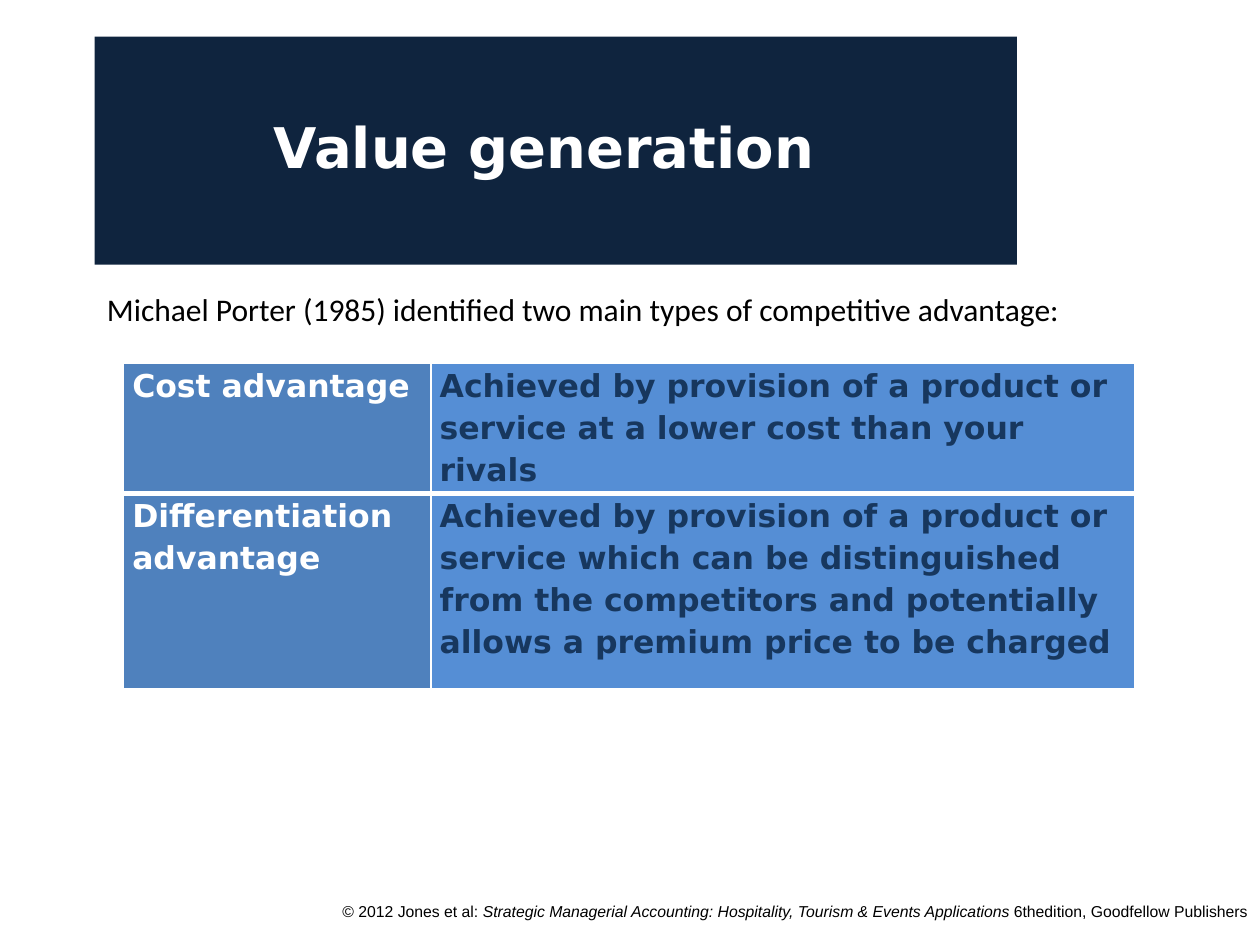
from dataclasses import dataclass

from lxml import etree
from pptx import Presentation
from pptx.dml.color import RGBColor
from pptx.enum.text import MSO_ANCHOR, PP_ALIGN
from pptx.oxml.ns import qn
from pptx.util import Inches, Pt

MIDDLE, TOP = MSO_ANCHOR.MIDDLE, MSO_ANCHOR.TOP
CENTER, LEFT, RIGHT = PP_ALIGN.CENTER, PP_ALIGN.LEFT, PP_ALIGN.RIGHT


@dataclass(frozen=True)
class Theme:
    white: str = "FFFFFF"
    black: str = "000000"
    navy: str = "0F243E"
    ink: str = "17375E"
    label: str = "4F81BD"
    detail: str = "558ED5"
    heading_font: str = "DejaVu Sans"
    body_font: str = "Calibri"
    footer_font: str = "Arial"
    title_size: int = 32
    body_size: int = 18
    footer_size: int = 9


class SlideBuilder:
    """Adds styled elements to the current slide."""

    def __init__(self, slide, theme):
        self.slide = slide
        self.theme = theme

    def set_attrs(self, obj, values):
        for name, value in values.items():
            setattr(obj, name, value)

    def run(self, p, text, font, size, color, **extra):
        r = p.add_run()
        r.text = text
        self.set_attrs(r.font, {"name": font, "size": Pt(size), **extra})
        r.font.color.rgb = RGBColor.from_string(color)

    def place(self, sp, left, top, width, height):
        self.set_attrs(sp, {"left": Inches(left), "top": Inches(top),
                            "width": Inches(width), "height": Inches(height)})

    def title(self, text, *box):
        t = self.theme
        sp = self.slide.shapes.title
        self.place(sp, *box)
        sp.fill.solid()
        sp.fill.fore_color.rgb = RGBColor.from_string(t.navy)
        tf = sp.text_frame
        self.set_attrs(tf, {"word_wrap": True, "vertical_anchor": MIDDLE,
                            "margin_right": Inches(0.28), "margin_bottom": Inches(0.12)})
        p = tf.paragraphs[0]
        p.alignment = CENTER
        self.run(p, text, t.heading_font, t.title_size, t.white, bold=True)

    def text(self, parts, box, font, size, align=LEFT):
        sp = self.slide.shapes.add_textbox(*map(Inches, box))
        sp.text_frame.word_wrap = True
        p = sp.text_frame.paragraphs[0]
        p.alignment = align
        for words, italic in parts:
            self.run(p, words, font, size, self.theme.black, italic=italic)

    def border(self, cell, side, width):
        ln = etree.SubElement(cell._tc.get_or_add_tcPr(), qn(f"a:ln{side}"), w=str(Pt(width)))
        fill = etree.SubElement(ln, qn("a:solidFill"))
        etree.SubElement(fill, qn("a:srgbClr"), val=self.theme.white)

    def cell(self, cell, text, fill, color, widths):
        t = self.theme
        self.set_attrs(cell, {"margin_left": Inches(0.07), "margin_right": Inches(0.07),
                              "margin_top": 0, "margin_bottom": 0, "vertical_anchor": TOP})
        for side, width in widths.items():
            self.border(cell, side, width)
        cell.fill.solid()
        cell.fill.fore_color.rgb = RGBColor.from_string(fill)
        p = cell.text_frame.paragraphs[0]
        p.line_spacing = 1.15
        self.run(p, text, t.heading_font, t.body_size, color, bold=True)

    def table(self, rows, left, top, col_widths, row_heights):
        t = self.theme
        frame = self.slide.shapes.add_table(
            len(rows), len(col_widths), Inches(left), Inches(top),
            Inches(sum(col_widths)), Inches(sum(row_heights)))
        table = frame.table
        self.set_attrs(table, {"first_row": False, "horz_banding": False})
        for column, width in zip(table.columns, col_widths):
            column.width = Inches(width)
        for row, height in zip(table.rows, row_heights):
            row.height = Inches(height)
        styles = ((t.label, t.white), (t.detail, t.ink))
        for i, texts in enumerate(rows):
            widths = {"L": 1, "R": 1, "T": 3 if i == 1 else 1, "B": 3 if i == 0 else 1}
            for j, (text, (fill, color)) in enumerate(zip(texts, styles)):
                self.cell(table.cell(i, j), text, fill, color, widths)


def main():
    prs = Presentation()
    prs.slide_width, prs.slide_height = Inches(10), Inches(7.5)
    theme = Theme()
    s = SlideBuilder(prs.slides.add_slide(prs.slide_layouts[5]), theme)

    s.text([("© 2012 Jones et al: ", False),
            ("Strategic Managerial Accounting: Hospitality, Tourism & Events Applications ", True),
            ("6thedition, Goodfellow Publishers", False)],
           (2.23, 7.11, 7.77, 0.39), theme.footer_font, theme.footer_size, RIGHT)
    s.title("Value generation", 0.75, 0.29, 7.32, 1.81)
    s.table([("Cost advantage",
              "Achieved by provision of a product or service at a lower cost than your rivals"),
             ("Differentiation advantage",
              "Achieved by provision of a product or service which can be distinguished "
              "from the competitors and potentially allows a premium price to be charged")],
            0.98, 2.88, (2.44, 5.59), (1.02, 1.55))
    s.text([("Michael Porter (1985) identified two main types of competitive advantage:", False)],
           (0.75, 2.25, 8.82, 0.4), theme.body_font, theme.body_size)
    prs.save("out.pptx")


if __name__ == "__main__":
    main()
